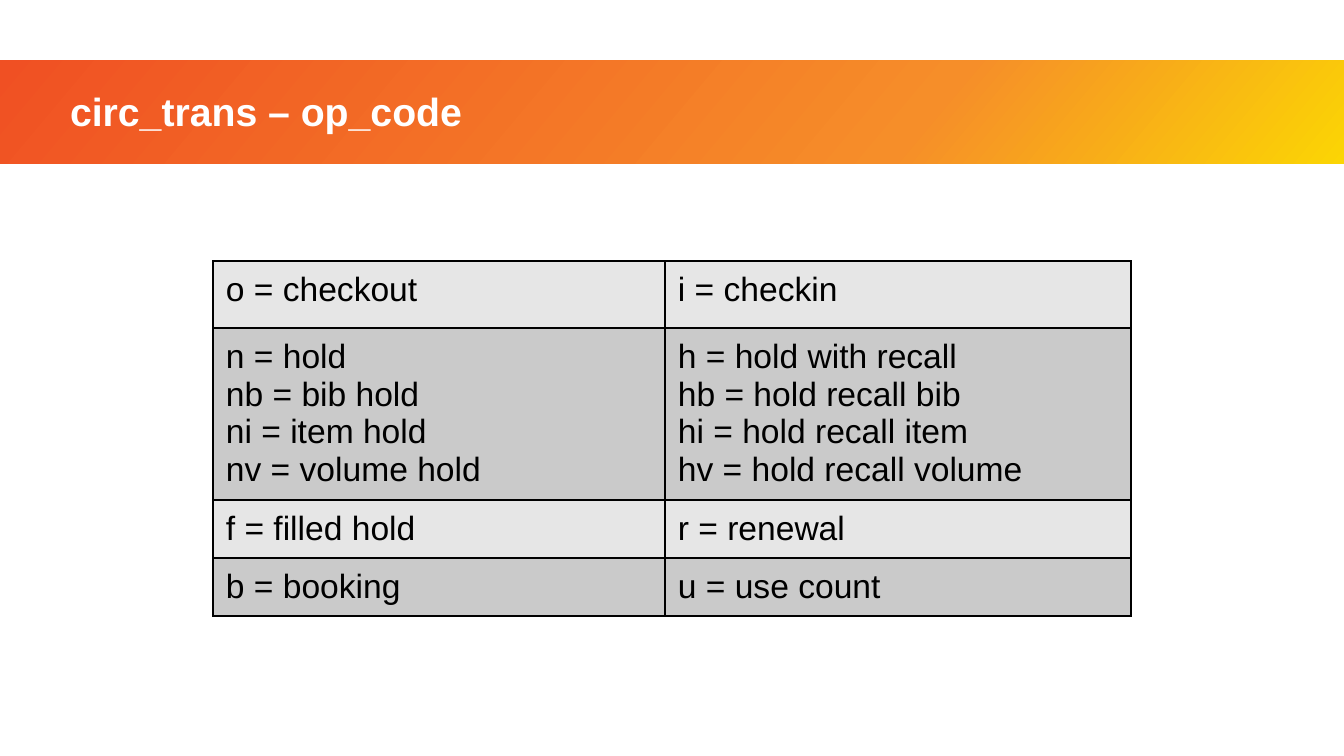
"""Build the circ_trans op_code slide: a gradient title band above a code table."""
from dataclasses import dataclass

from lxml import etree
from pptx import Presentation
from pptx.dml.color import RGBColor
from pptx.enum.shapes import MSO_SHAPE
from pptx.enum.text import MSO_ANCHOR, PP_ALIGN
from pptx.oxml.ns import qn
from pptx.util import Pt

RECTANGLE = MSO_SHAPE.RECTANGLE
MIDDLE = MSO_ANCHOR.MIDDLE
LEFT = PP_ALIGN.LEFT
PX_PER_INCH = 134.4
TITLE_ONLY = 5


@dataclass(frozen=True)
class Theme:
    font: str = "Arial"
    title_size: int = 21
    cell_size: int = 18
    title_color: str = "FFFFFF"
    ink: str = "000000"
    row_fills: tuple = ("E6E6E6", "CACACA")
    band_stops: tuple = ((0, "F05023"), (68, "F68E29"), (100, "FBD504"))
    band_angle: int = 40
    border: int = 1


theme = Theme()


def px(length):
    return round(length * 914400 / PX_PER_INCH)


def add_text(para, text, size, color, bold=False):
    span = para.add_run()
    span.text = text
    span.font.name = theme.font
    span.font.size = Pt(size)
    span.font.bold = bold
    span.font.color.rgb = RGBColor.from_string(color)


deck = Presentation()
deck.slide_width, deck.slide_height = px(1344), px(756)
page = deck.slides.add_slide(deck.slide_layouts[TITLE_ONLY])
title = page.shapes.title

band = page.shapes.add_shape(RECTANGLE, 0, px(60), px(1344), px(104))
band.shadow.inherit = False
band.line.fill.background()
band.fill.gradient()
band.fill.gradient_angle = 360 - theme.band_angle
stop_list = band._element.spPr.find(qn("a:gradFill")).find(qn("a:gsLst"))
for stop in list(stop_list):
    stop_list.remove(stop)
for percent, color in theme.band_stops:
    stop = etree.SubElement(stop_list, qn("a:gs"), pos=str(percent * 1000))
    etree.SubElement(stop, qn("a:srgbClr"), val=color)
title._element.addprevious(band._element)

title.left, title.top, title.width, title.height = px(57), px(74), px(1222), px(80)
frame = title.text_frame
frame.word_wrap = True
frame.vertical_anchor = MIDDLE
frame.margin_left = frame.margin_right = px(13)
frame.margin_top = frame.margin_bottom = px(7)
para = frame.paragraphs[0]
para.alignment = LEFT
para.line_spacing = 0.9
add_text(para, "circ_trans – op_code", theme.title_size, theme.title_color, bold=True)

codes = [
    (["o = checkout"], ["i = checkin"]),
    (
        ["n = hold", "nb = bib hold", "ni = item hold", "nv = volume hold"],
        ["h = hold with recall", "hb = hold recall bib",
         "hi = hold recall item", "hv = hold recall volume"],
    ),
    (["f = filled hold"], ["r = renewal"]),
    (["b = booking"], ["u = use count"]),
]
column_widths = [452, 466]
row_heights = [67, 172, 58, 58]

holder = page.shapes.add_table(
    len(codes), len(column_widths), px(213), px(261),
    px(sum(column_widths)), px(sum(row_heights)),
)
table = holder.table
table.first_row = table.horz_banding = False
for column, width in zip(table.columns, column_widths):
    column.width = px(width)
for row, height in zip(table.rows, row_heights):
    row.height = px(height)

for row_index, row_codes in enumerate(codes):
    fill = theme.row_fills[row_index % 2]
    for column_index, lines in enumerate(row_codes):
        cell = table.cell(row_index, column_index)
        cell.margin_left = cell.margin_right = px(13)
        cell.margin_top = cell.margin_bottom = px(10)
        properties = cell._tc.get_or_add_tcPr()
        for side in ("a:lnL", "a:lnR", "a:lnT", "a:lnB"):
            edge = etree.SubElement(properties, qn(side), w=str(Pt(theme.border)))
            solid = etree.SubElement(edge, qn("a:solidFill"))
            etree.SubElement(solid, qn("a:srgbClr"), val=theme.ink)
        cell.fill.solid()
        cell.fill.fore_color.rgb = RGBColor.from_string(fill)
        para = cell.text_frame.paragraphs[0]
        for line_index, line in enumerate(lines):
            if line_index:
                para.add_line_break()
            add_text(para, line, theme.cell_size, theme.ink)

deck.save("out.pptx")
